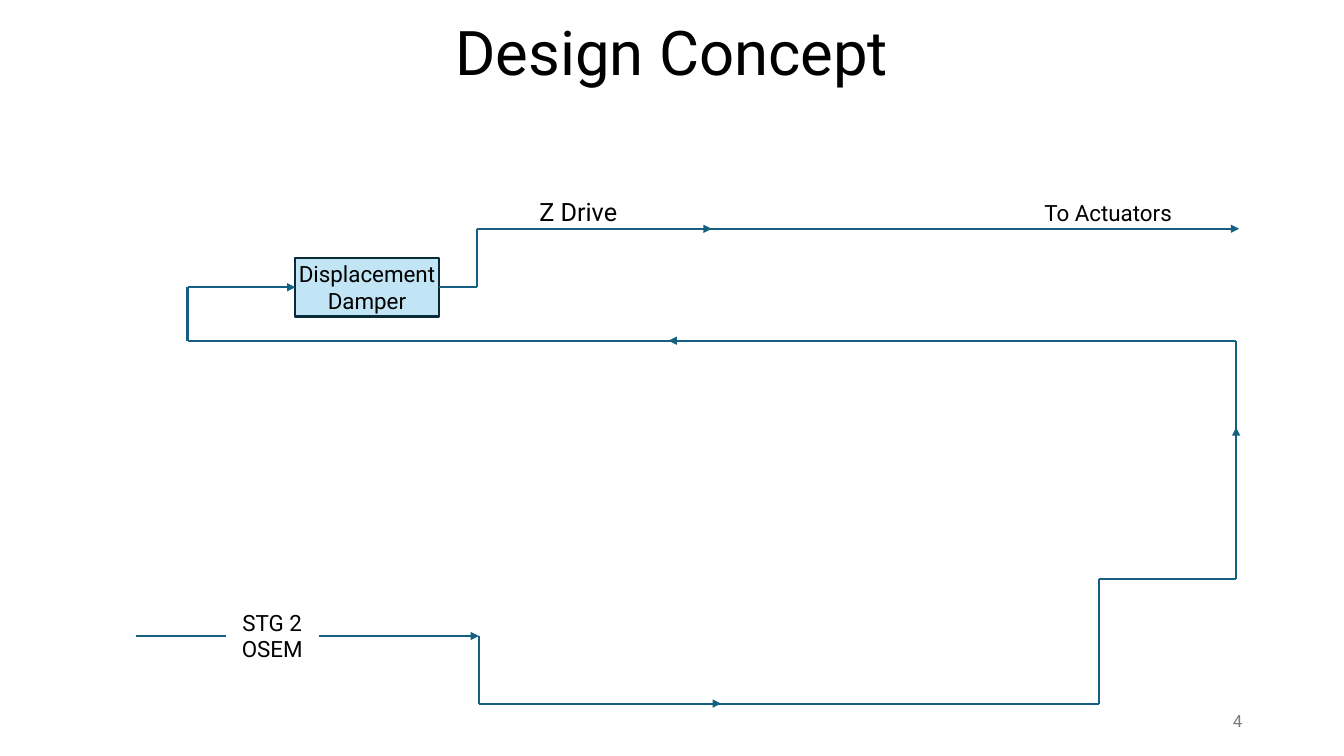
"""Build the Design Concept slide: a signal path from the STG 2 OSEM to the actuators."""
import itertools

import lxml.etree
import pptx
import pptx.dml.color
import pptx.enum.shapes
import pptx.enum.text
import pptx.oxml.ns
import pptx.util

Inches = pptx.util.Inches
ALIGN = pptx.enum.text.PP_ALIGN
MIDDLE = pptx.enum.text.MSO_ANCHOR.MIDDLE
TOP = pptx.enum.text.MSO_ANCHOR.TOP
RIGHT_SIDE, LEFT_SIDE = 3, 1
THEME = {
    "font": "Roboto", "text": "000000", "number": "797979",
    "signal": "156082", "box fill": "C1E5F5", "box line": "092A39",
    "title size": 44, "drive size": 18, "label size": 16, "number size": 12,
    "line width": 1.5,
}


def color(name):
    return pptx.dml.color.RGBColor.from_string(THEME[name])


def write(shape, lines, size, align, anchor, ink="text"):
    frame = shape.text_frame
    frame.word_wrap = True
    frame.vertical_anchor = anchor
    for index, line in enumerate(lines):
        paragraph = frame.add_paragraph() if index else frame.paragraphs[0]
        paragraph.alignment = align
        run = paragraph.add_run()
        run.text = line
        run.font.name = THEME["font"]
        run.font.size = pptx.util.Pt(THEME[size])
        run.font.color.rgb = color(ink)


presentation = pptx.Presentation()
presentation.slide_width = Inches(13.33)
presentation.slide_height = Inches(7.5)
slide = presentation.slides.add_slide(presentation.slide_layouts[5])

title = slide.shapes.title
title.left, title.top = Inches(1.35), Inches(0.1)
title.width, title.height = Inches(10.63), Inches(0.9)
write(title, ["Design Concept"], "title size", ALIGN.CENTER, MIDDLE)
title.text_frame.paragraphs[0].line_spacing = 0.9

damper = slide.shapes.add_shape(
    pptx.enum.shapes.MSO_SHAPE.RECTANGLE,
    Inches(2.93), Inches(2.56), Inches(1.42), Inches(0.58))
damper.shadow.inherit = False
damper.fill.solid()
damper.fill.fore_color.rgb = color("box fill")
damper.line.color.rgb = color("box line")
damper.line.width = pptx.util.Pt(THEME["line width"])
damper.text_frame.margin_left = damper.text_frame.margin_right = 0
damper.text_frame.margin_top = damper.text_frame.margin_bottom = 0
write(damper, ["Displacement Damper"], "label size", ALIGN.CENTER, MIDDLE)

labels = {}
for lines, left, top, width, height, size, align, anchor, ink in [
    (["Z Drive"], 5.25, 1.9, 1.12, 0.4, "drive size", ALIGN.LEFT, TOP, "text"),
    (["To Actuators"], 10.26, 1.93, 2.03, 0.37, "label size", ALIGN.LEFT, TOP, "text"),
    (["STG 2", "OSEM"], 2.24, 5.99, 0.92, 0.64, "label size", ALIGN.CENTER, TOP, "text"),
    (["4"], 9.42, 6.95, 3, 0.4, "number size", ALIGN.RIGHT, MIDDLE, "number"),
]:
    label = slide.shapes.add_textbox(Inches(left), Inches(top), Inches(width), Inches(height))
    write(label, lines, size, align, anchor, ink)
    labels[lines[0]] = label
sensor = labels["STG 2"]

sensor_to_damper = [
    (4.75, 6.31), (4.75, 6.98), (10.9, 6.98), (10.9, 5.74),
    (12.26, 5.74), (12.26, 3.38), (1.86, 3.38), (1.86, 2.85),
]
damper_to_drive = [(4.73, 2.85), (4.73, 2.27)]
segments = [
    (start, end, False, None, None)
    for route in (sensor_to_damper, damper_to_drive)
    for start, end in itertools.pairwise(route)
]
segments += [
    ((1.35, 6.31), (2.24, 6.31), False, None, sensor),
    ((3.16, 6.31), (4.75, 6.31), True, sensor, None),
    ((4.75, 6.98), (7.15, 6.98), True, None, None),
    ((12.26, 5.74), (12.26, 4.24), True, None, None),
    ((11.12, 3.38), (6.63, 3.38), True, None, None),
    ((1.86, 2.85), (2.93, 2.85), True, None, damper),
    ((4.35, 2.85), (4.73, 2.85), False, damper, None),
    ((4.73, 2.27), (7.06, 2.27), True, None, None),
    ((4.73, 2.27), (12.29, 2.27), True, None, None),
]
for start, end, has_arrow, source, target in segments:
    connector = slide.shapes.add_connector(
        pptx.enum.shapes.MSO_CONNECTOR.STRAIGHT,
        *(Inches(value) for value in start + end))
    if source:
        connector.begin_connect(source, RIGHT_SIDE)
    if target:
        connector.end_connect(target, LEFT_SIDE)
    connector.line.color.rgb = color("signal")
    connector.line.width = pptx.util.Pt(THEME["line width"])
    if has_arrow:
        lxml.etree.SubElement(
            connector.line._get_or_add_ln(), pptx.oxml.ns.qn("a:tailEnd"), type="triangle")
    lxml.etree.SubElement(connector._element.spPr, pptx.oxml.ns.qn("a:effectLst"))

presentation.save("out.pptx")
